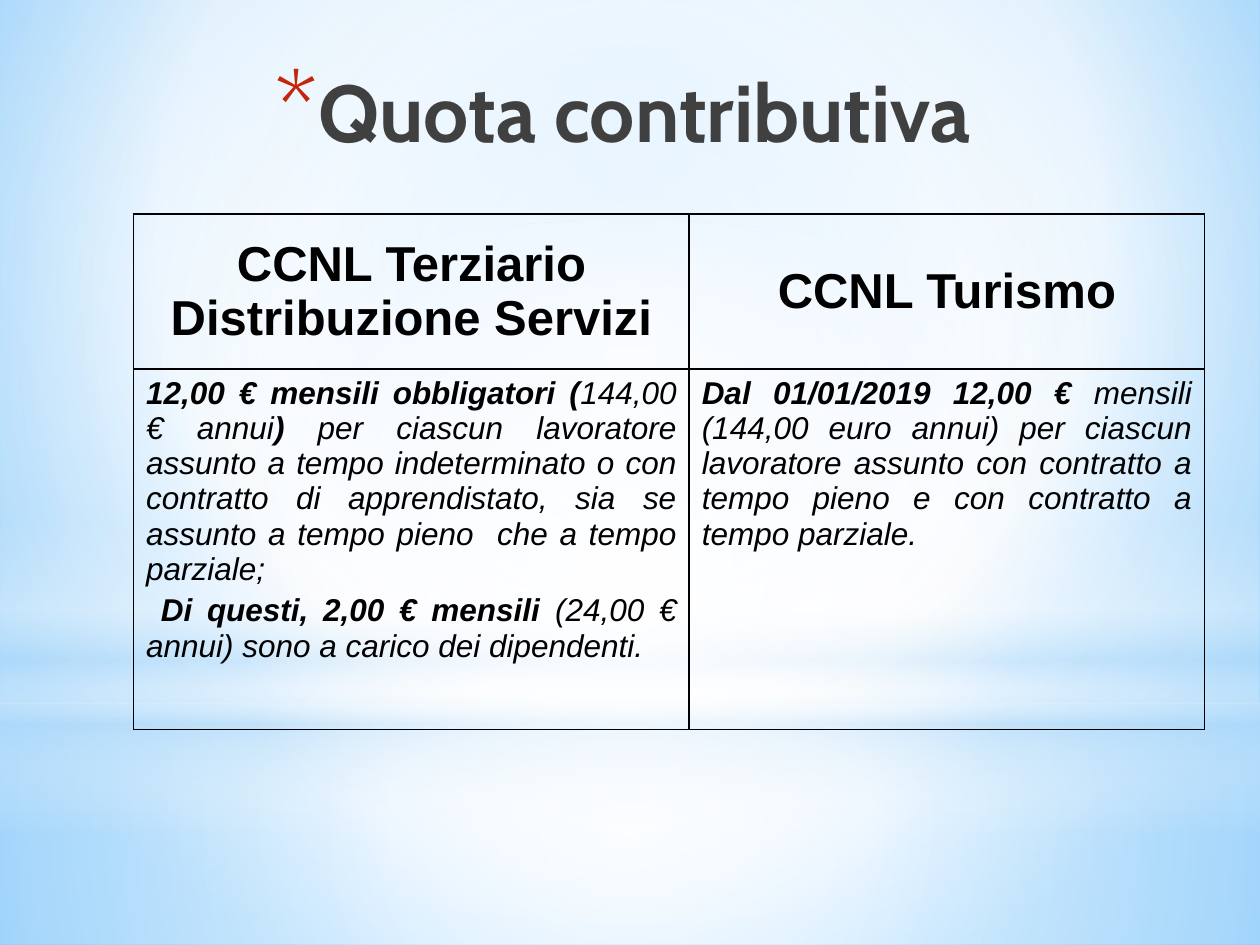
import pptx
import pptx.util
import pptx.dml.color
import pptx.enum.shapes
import pptx.enum.text
import pptx.oxml
import pptx.oxml.ns
import lxml.etree

Inches = pptx.util.Inches
Pt = pptx.util.Pt
RGBColor = pptx.dml.color.RGBColor
Align = pptx.enum.text.PP_ALIGN
Anchor = pptx.enum.text.MSO_ANCHOR
Shape = pptx.enum.shapes.MSO_SHAPE
qn = pptx.oxml.ns.qn

BLACK = RGBColor(0x00, 0x00, 0x00)
WHITE = RGBColor(0xFF, 0xFF, 0xFF)
TITLE_GREY = RGBColor(0x40, 0x40, 0x40)
BULLET_RED = RGBColor(0xC3, 0x26, 0x0C)
PALE_BLUE = RGBColor(0xB4, 0xDC, 0xFA)
SKY_BLUE = RGBColor(0x9E, 0xD5, 0xFF)
DEEP_BLUE = RGBColor(0x5B, 0xB9, 0xFF)

CENTRE = (50, 50, 50, 50)

HEADERS = ["CCNL Terziario Distribuzione Servizi", "CCNL Turismo"]
DETAILS = [
    [
        [
            ("12,00 € mensili obbligatori (", True),
            ("144,00 € annui", False),
            (")", True),
            (" per ciascun lavoratore assunto a tempo indeterminato o con contratto di "
             "apprendistato, sia se assunto a tempo pieno  che a tempo parziale; ", False),
        ],
        [
            (" Di questi, 2,00 € mensili ", True),
            ("(24,00 € annui) sono a carico dei dipendenti.", False),
        ],
    ],
    [
        [
            ("Dal 01/01/2019 12,00 € ", True),
            ("mensili (144,00 euro annui) per ciascun lavoratore assunto con contratto a "
             "tempo pieno e con contratto a tempo parziale.", False),
        ],
    ],
]


def add_child(parent, tag, **attributes):
    """Append a drawing element with the given attributes."""
    child = lxml.etree.SubElement(parent, qn(tag))
    for name, value in attributes.items():
        child.set(name, str(value))
    return child


def apply_gradient(parent, stops, focus=None):
    """Replace the solid fill under parent with a circular or vertical gradient."""
    gradient = pptx.oxml.parse_xml(f"<a:gradFill {pptx.oxml.ns.nsdecls('a')} rotWithShape='1'/>")
    stop_list = add_child(gradient, "a:gsLst")
    for position, color, opacity in stops:
        stop = add_child(stop_list, "a:gs", pos=position * 1000)
        add_child(add_child(stop, "a:srgbClr", val=color), "a:alpha", val=opacity * 1000)
    if focus:
        path = add_child(gradient, "a:path", path="circle")
        sides = {side: value * 1000 for side, value in zip("ltrb", focus)}
        add_child(path, "a:fillToRect", **sides)
    else:
        add_child(gradient, "a:lin", ang=90 * 60000, scaled=0)
    solid = parent.find(".//" + qn("a:solidFill"))
    solid.getparent().replace(solid, gradient)


def set_background(slide):
    """Fill the slide background with the blue glow."""
    slide.background.fill.solid()
    stops = [(0, SKY_BLUE, 100), (60, WHITE, 100), (100, DEEP_BLUE, 100)]
    apply_gradient(slide.element.find(".//" + qn("p:bg")), stops, (20, 10, 20, 60))


def add_glow(slide, kind, top, height, stops, focus=None):
    """Add a full-width translucent gradient shape."""
    shape = slide.shapes.add_shape(kind, 0, Inches(top), Inches(10), Inches(height))
    shape.shadow.inherit = False
    shape.line.fill.background()
    shape.fill.solid()
    apply_gradient(shape.element.spPr, stops, focus)


def format_title(title):
    """Write the title with its red asterisk bullet in front of the glows."""
    title.element.getparent().append(title.element)
    title.left, title.top = Inches(1.38), Inches(0.44)
    title.width, title.height = Inches(7.12), Inches(1.25)
    frame = title.text_frame
    frame.text = "Quota contributiva"
    frame.vertical_anchor = Anchor.TOP
    frame.auto_size = pptx.enum.text.MSO_AUTO_SIZE.NONE
    paragraph = frame.paragraphs[0]
    paragraph.alignment = Align.CENTER
    format_font(paragraph.runs[0].font, 46, "Cabin", TITLE_GREY, bold=True)
    properties = paragraph._p.get_or_add_pPr()
    properties.set("marL", str(Inches(0.35)))
    properties.set("indent", str(Inches(-0.35)))
    add_child(add_child(properties, "a:buClr"), "a:srgbClr", val=BULLET_RED)
    add_child(properties, "a:buSzPct", val=128000)
    add_child(properties, "a:buFont", typeface="Cabin")
    add_child(properties, "a:buChar", char="*")


def format_font(font, size, name, color, bold=False, italic=False):
    """Set the look of a run."""
    font.size, font.name = Pt(size), name
    font.bold, font.italic = bold, italic
    font.color.rgb = color


def fill_cell(cell, paragraphs, size, alignment, anchor, italic):
    """Write paragraphs of (text, bold) runs into a clear cell with black borders."""
    frame = cell.text_frame
    for index, runs in enumerate(paragraphs):
        paragraph = frame.add_paragraph() if index else frame.paragraphs[0]
        paragraph.alignment = alignment
        paragraph.space_before = Pt(size * 0.2)
        for text, bold in runs:
            run = paragraph.add_run()
            run.text = text
            format_font(run.font, size, "Arial", BLACK, bold, italic)
    cell.vertical_anchor = anchor
    properties = cell._tc.get_or_add_tcPr()
    for side in ("a:lnL", "a:lnR", "a:lnT", "a:lnB"):
        line = add_child(properties, side, w=Pt(1))
        add_child(add_child(line, "a:solidFill"), "a:srgbClr", val=BLACK)
    cell.fill.background()


def add_contract_table(slide):
    """Add the table comparing the two contracts."""
    frame = slide.shapes.add_table(2, 2, Inches(1.06), Inches(1.7), Inches(8.5), Inches(4.09))
    table = frame.table
    table.first_row = table.horz_banding = False
    for column, width in zip(table.columns, (4.41, 4.09)):
        column.width = Inches(width)
    for row, height in zip(table.rows, (1.23, 2.86)):
        row.height = Inches(height)
    for index, (header, detail) in enumerate(zip(HEADERS, DETAILS)):
        fill_cell(table.cell(0, index), [[(header, True)]], 28, Align.CENTER, Anchor.MIDDLE, False)
        fill_cell(table.cell(1, index), detail, 18, Align.JUSTIFY, Anchor.TOP, True)


def main():
    """Build the slide and save it."""
    presentation = pptx.Presentation()
    presentation.slide_width, presentation.slide_height = Inches(10), Inches(7.5)
    slide = presentation.slides.add_slide(presentation.slide_layouts[5])
    set_background(slide)
    add_glow(slide, Shape.RECTANGLE, 5.58, 1.92,
             [(0, WHITE, 91), (37, WHITE, 76), (100, PALE_BLUE, 79)], CENTRE)
    add_glow(slide, Shape.RECTANGLE, 0, 5.58,
             [(0, WHITE, 89), (48, WHITE, 62), (100, PALE_BLUE, 79)], CENTRE)
    add_glow(slide, Shape.RECTANGLE, 4.12, 2.5,
             [(0, WHITE, 0), (29, WHITE, 30), (45, PALE_BLUE, 40),
              (55, WHITE, 26), (65, PALE_BLUE, 60), (100, WHITE, 0)])
    add_glow(slide, Shape.OVAL, 1.75, 5.58, [(0, WHITE, 100), (56, WHITE, 0)], CENTRE)
    format_title(slide.shapes.title)
    add_contract_table(slide)
    presentation.save("out.pptx")


if __name__ == "__main__":
    main()
